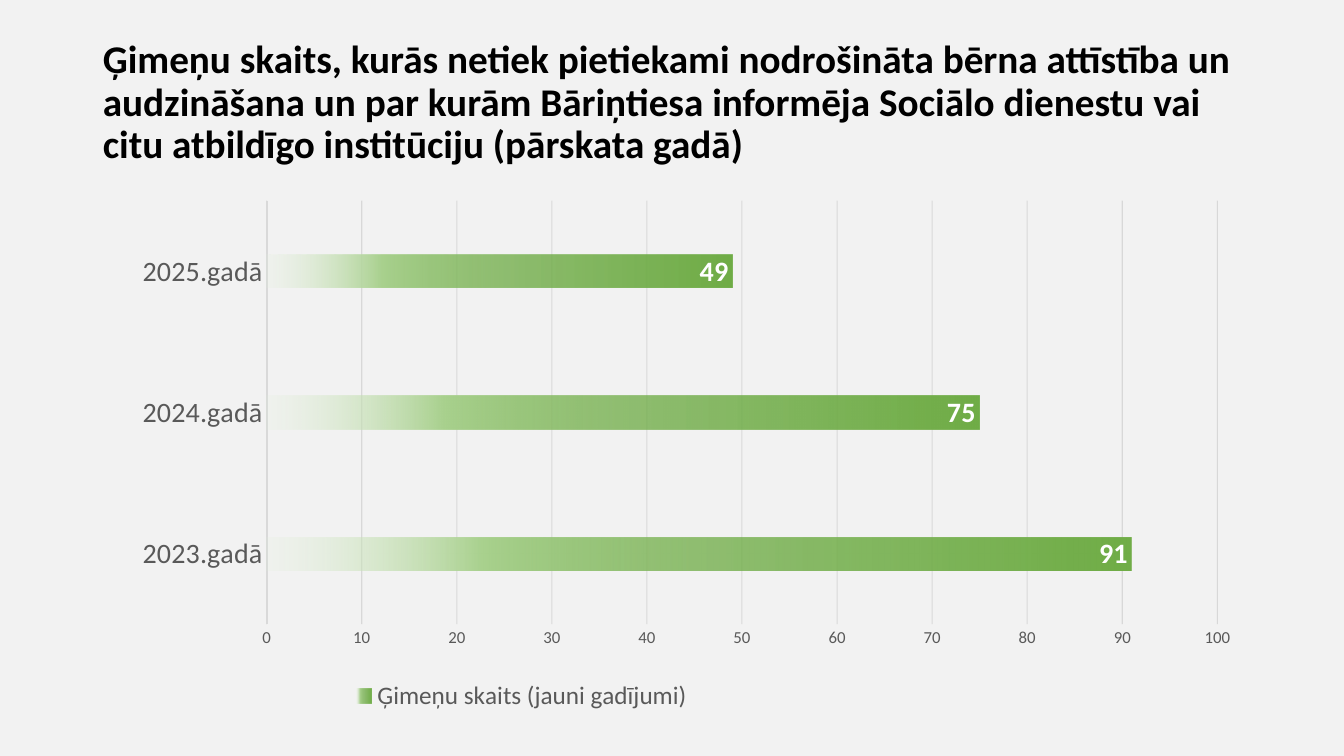
"""Build the slide on families reported by the orphan's court."""
from dataclasses import dataclass

from lxml.etree import SubElement
from pptx import Presentation
from pptx.chart.data import CategoryChartData
from pptx.dml.color import RGBColor
from pptx.enum.chart import XL_CHART_TYPE, XL_LABEL_POSITION, XL_LEGEND_POSITION, XL_TICK_MARK
from pptx.enum.text import MSO_ANCHOR, PP_ALIGN
from pptx.oxml import parse_xml
from pptx.oxml.ns import nsdecls, qn
from pptx.util import Pt

HEADING = (
    "Ģimeņu skaits, kurās netiek pietiekami nodrošināta bērna attīstība un "
    "audzināšana un par kurām Bāriņtiesa informēja Sociālo dienestu vai "
    "citu atbildīgo institūciju (pārskata gadā)"
)
SERIES = "Ģimeņu skaits (jauni gadījumi)"
FAMILIES = {"2023.gadā": 91, "2024.gadā": 75, "2025.gadā": 49}

PX = 9144
SLIDE = (1333, 750)
HEADING_BOX = (92, 40, 1150, 125)
CHART_BOX = (92, 165, 1150, 568)
PLOT_AREA = {"x": 0.15, "y": 0.06, "w": 0.82, "h": 0.74}
LEGEND_AREA = {"x": 0.22, "y": 0.88, "w": 0.3, "h": 0.09}


@dataclass(frozen=True)
class Theme:
    font: str = "Calibri"
    background: str = "F2F2F2"
    heading: str = "000000"
    muted: str = "595959"
    value: str = "FFFFFF"
    axis: str = "D9D9D9"
    grid: str = "BFBFBF"
    bar_stops: tuple = ((0, "70AD47", 100), (51, "70AD47", 75), (75, "A9D18E", 100), (100, "E2F0D9", 15))
    heading_size: int = 28
    category_size: int = 20
    tick_size: int = 12
    legend_size: int = 18
    value_size: int = 20


THEME = Theme()


def emu(box):
    return [length * PX for length in box]


def style(font, size, color, bold=False):
    font.name, font.size, font.bold = THEME.font, Pt(size), bold
    font.color.rgb = RGBColor.from_string(color)


def set_layout(parent, index, area, inner=False):
    for previous in parent.findall(qn("c:layout")):
        parent.remove(previous)
    layout = parse_xml(f"<c:layout {nsdecls('c')}/>")
    manual = SubElement(layout, qn("c:manualLayout"))
    if inner:
        SubElement(manual, qn("c:layoutTarget"), val="inner")
    for side in "xy":
        SubElement(manual, qn(f"c:{side}Mode"), val="edge")
    for side, share in area.items():
        SubElement(manual, qn(f"c:{side}"), val=str(share))
    parent.insert(index, layout)


def add_heading(slide):
    heading = slide.shapes.title
    heading.left, heading.top, heading.width, heading.height = emu(HEADING_BOX)
    frame = heading.text_frame
    frame.word_wrap = True
    frame.vertical_anchor = MSO_ANCHOR.MIDDLE
    paragraph = frame.paragraphs[0]
    paragraph.alignment = PP_ALIGN.LEFT
    paragraph.line_spacing = 0.9
    run = paragraph.add_run()
    run.text = HEADING
    style(run.font, THEME.heading_size, THEME.heading, True)


def style_axes(chart):
    years, counts = chart.category_axis, chart.value_axis
    for axis, size in ((years, THEME.category_size), (counts, THEME.tick_size)):
        axis.major_tick_mark = axis.minor_tick_mark = XL_TICK_MARK.NONE
        style(axis.tick_labels.font, size, THEME.muted)
    years.format.line.color.rgb = RGBColor.from_string(THEME.axis)
    years.format.line.width = Pt(1.5)
    counts.minimum_scale, counts.maximum_scale, counts.major_unit = 0, 100, 10
    counts.format.line.fill.background()
    counts.has_major_gridlines = True
    grid = counts.major_gridlines.format.line
    grid.color.rgb = RGBColor.from_string(THEME.grid)
    grid.width = Pt(0.75)
    for color in counts._element.find(qn("c:majorGridlines")).iter(qn("a:srgbClr")):
        SubElement(color, qn("a:alpha"), val="50000")


def style_bars(chart):
    plot = chart.plots[0]
    plot.gap_width, plot.overlap, plot.vary_by_categories = 326, -58, False
    bars = plot.series[0]
    stops = "".join(
        f'<a:gs pos="{pos * 1000}"><a:srgbClr val="{color}"><a:alpha val="{alpha * 1000}"/></a:srgbClr></a:gs>'
        for pos, color, alpha in THEME.bar_stops
    )
    bars._element.get_or_add_spPr().append(parse_xml(
        f"<a:gradFill {nsdecls('a')}><a:gsLst>{stops}</a:gsLst>"
        '<a:lin ang="10800000" scaled="0"/></a:gradFill>'
    ))
    bars.format.line.fill.background()
    labels = bars.data_labels
    labels.show_value = True
    labels.position = XL_LABEL_POSITION.INSIDE_END
    style(labels.font, THEME.value_size, THEME.value, True)


def add_family_chart(slide):
    families = CategoryChartData()
    families.categories = list(FAMILIES)
    families.add_series(SERIES, list(FAMILIES.values()))
    chart = slide.shapes.add_chart(XL_CHART_TYPE.BAR_CLUSTERED, *emu(CHART_BOX), families).chart
    chart.has_title = False
    style(chart.font, 10, THEME.heading)
    style_axes(chart)
    style_bars(chart)
    chart.has_legend = True
    legend = chart.legend
    legend.position = XL_LEGEND_POSITION.BOTTOM
    legend.include_in_layout = False
    style(legend.font, THEME.legend_size, THEME.muted)
    set_layout(legend._element, 1, LEGEND_AREA)
    set_layout(chart._chartSpace.chart.plotArea, 0, PLOT_AREA, True)


def main():
    deck = Presentation()
    deck.slide_width, deck.slide_height = emu(SLIDE)
    slide = deck.slides.add_slide(deck.slide_layouts[5])
    slide.background.fill.solid()
    slide.background.fill.fore_color.rgb = RGBColor.from_string(THEME.background)
    add_heading(slide)
    add_family_chart(slide)
    deck.save("out.pptx")


if __name__ == "__main__":
    main()
